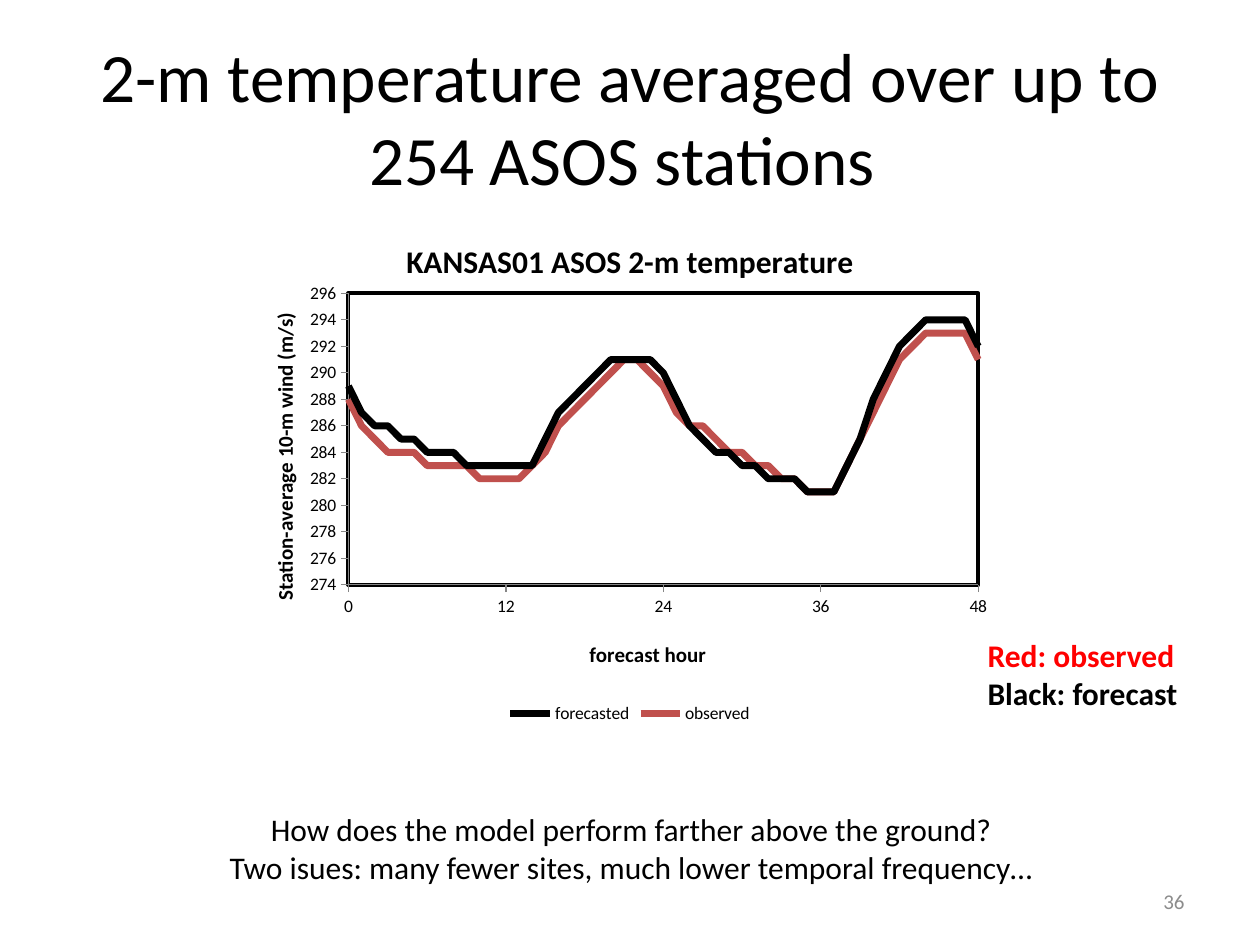
from lxml import etree
from pptx import Presentation
from pptx.chart.data import XyChartData
from pptx.dml.color import RGBColor
from pptx.enum.chart import XL_CHART_TYPE as ChartType
from pptx.enum.chart import XL_LEGEND_POSITION as LegendPosition
from pptx.enum.chart import XL_TICK_MARK as TickMark
from pptx.enum.text import MSO_ANCHOR as Anchor
from pptx.enum.text import PP_ALIGN as Align
from pptx.oxml import parse_xml
from pptx.oxml.ns import nsdecls, qn
from pptx.util import Pt

FONT = "Calibri"
COLORS = {"black": "000000", "white": "FFFFFF", "red": "FF0000",
          "observed": "C0504D", "axis": "868686", "number": "8C8C8C"}

# Station-average temperature for each forecast hour, 0 to 48
SERIES = {
    "forecasted": ("black", [
        289, 287, 286, 286, 285, 285, 284, 284, 284, 283, 283, 283,
        283, 283, 283, 285, 287, 288, 289, 290, 291, 291, 291, 291,
        290, 288, 286, 285, 284, 284, 283, 283, 282, 282, 282, 281,
        281, 281, 283, 285, 288, 290, 292, 293, 294, 294, 294, 294, 292]),
    "observed": ("observed", [
        288, 286, 285, 284, 284, 284, 283, 283, 283, 283, 282, 282,
        282, 282, 283, 284, 286, 287, 288, 289, 290, 291, 291, 290,
        289, 287, 286, 286, 285, 284, 284, 283, 283, 282, 282, 281,
        281, 281, 283, 285, 287, 289, 291, 292, 293, 293, 293, 293, 291]),
}


def rgb(name):
    return RGBColor.from_string(COLORS[name])


def style_font(font, size, color="black", bold=False):
    for key, value in {"name": FONT, "size": Pt(size), "bold": bold}.items():
        setattr(font, key, value)
    font.color.rgb = rgb(color)


def place(shape, bounds):
    for key, value in zip(("left", "top", "width", "height"), bounds):
        setattr(shape, key, Pt(value))


def add_title(page, bounds, text):
    title = page.shapes.title
    place(title, bounds)
    frame = title.text_frame
    frame.text = text
    frame.vertical_anchor = Anchor.MIDDLE
    para = frame.paragraphs[0]
    para.alignment = Align.CENTER
    style_font(para.runs[0].font, 39.6)


def add_text(page, bounds, lines, size, align=Align.LEFT, bold=False,
             anchor=Anchor.TOP, wrap=False):
    """Write one paragraph for each (text, color) pair."""
    box = page.shapes.add_textbox(*map(Pt, bounds))
    frame = box.text_frame
    frame.word_wrap = wrap
    frame.vertical_anchor = anchor
    for index, (text, color) in enumerate(lines):
        para = frame.add_paragraph() if index else frame.paragraphs[0]
        para.alignment = align
        span = para.add_run()
        span.text = text
        style_font(span.font, size, color, bold)


def set_layout(element, **values):
    """Fix a chart part at fractions of the chart area."""
    for old in element.findall(qn("c:layout")):
        element.remove(old)
    layout = etree.Element(qn("c:layout"))
    manual = etree.SubElement(layout, qn("c:manualLayout"))
    if "w" in values:
        etree.SubElement(manual, qn("c:layoutTarget")).set("val", "inner")
    for key in ("x", "y"):
        etree.SubElement(manual, qn(f"c:{key}Mode")).set("val", "edge")
    for key, value in values.items():
        etree.SubElement(manual, qn(f"c:{key}")).set("val", str(value))
    text = element.find(qn("c:tx"))
    element.insert(0 if text is None else element.index(text) + 1, layout)


def write_chart_title(owner, text, size):
    frame = owner.text_frame
    frame.text = text
    style_font(frame.paragraphs[0].runs[0].font, size, bold=True)


def format_axis(axis, title, scale, corner):
    low, high, step = scale
    settings = {"minimum_scale": low, "maximum_scale": high,
                "major_unit": step, "has_major_gridlines": False,
                "major_tick_mark": TickMark.OUTSIDE,
                "minor_tick_mark": TickMark.NONE}
    for key, value in settings.items():
        setattr(axis, key, value)
    style_font(axis.tick_labels.font, 10)
    axis.tick_labels.number_format = "General"
    axis.tick_labels.number_format_is_linked = False
    axis.format.line.color.rgb = rgb("axis")
    axis.format.line.width = Pt(0.75)
    write_chart_title(axis.axis_title, title, 12)
    set_layout(axis.axis_title._element, x=corner[0], y=corner[1])


def add_temperature_chart(page, bounds):
    data = XyChartData()
    for name, (_, values) in SERIES.items():
        series = data.add_series(name)
        for hour, value in enumerate(values):
            series.add_data_point(hour, value)
    chart = page.shapes.add_chart(ChartType.XY_SCATTER_LINES_NO_MARKERS,
                                  *map(Pt, bounds), data).chart
    style_font(chart.font, 10)
    chart.has_title = True
    write_chart_title(chart.chart_title, "KANSAS01 ASOS 2-m temperature", 18)

    # Legend
    chart.has_legend = True
    chart.legend.position = LegendPosition.BOTTOM
    chart.legend.include_in_layout = False
    style_font(chart.legend.font, 10)

    # Axes
    format_axis(chart.category_axis, "forecast hour", (0, 48, 12), (0.44, 0.82))
    format_axis(chart.value_axis, "Station-average 10-m wind (m/s)",
                (274, 296, 2), (0.01, 0.18))

    # Curves
    plot = chart.plots[0]
    plot.vary_by_categories = False
    for series in plot.series:
        series.smooth = False
        series.format.line.color.rgb = rgb(SERIES[series.name][0])
        series.format.line.width = Pt(4)

    # Framed plot area
    area = chart._chartSpace.chart.plotArea
    set_layout(area, x=0.12, y=0.15, w=0.85, h=0.57)
    area.append(parse_xml(
        f'<c:spPr {nsdecls("c", "a")}>'
        f'<a:solidFill><a:srgbClr val="{COLORS["white"]}"/></a:solidFill>'
        f'<a:ln w="{Pt(2.25)}"><a:solidFill>'
        f'<a:srgbClr val="{COLORS["black"]}"/></a:solidFill></a:ln></c:spPr>'))


def main():
    deck = Presentation()
    deck.slide_width, deck.slide_height = Pt(720), Pt(540)
    page = deck.slides.add_slide(deck.slide_layouts[5])
    add_title(page, (36, 21.6, 648, 90),
              "2-m temperature averaged over up to 254 ASOS stations ")
    # Slide number
    add_text(page, (516, 500.5, 168, 28.75), [("36", "number")], 12,
             align=Align.RIGHT, anchor=Anchor.MIDDLE, wrap=True)
    add_temperature_chart(page, (148.3, 123.8, 423.4, 292.3))
    # Closing question
    add_text(page, (121, 459.4, 479.5, 51),
             [("How does the model perform farther above the ground?", "black"),
              ("Two isues: many fewer sites, much lower temporal frequency…",
               "black")], 18, align=Align.CENTER)
    # Color key
    add_text(page, (557.3, 360, 124.6, 51),
             [("Red: observed", "red"), ("Black: forecast", "black")],
             18, bold=True)
    deck.save("out.pptx")


if __name__ == "__main__":
    main()
